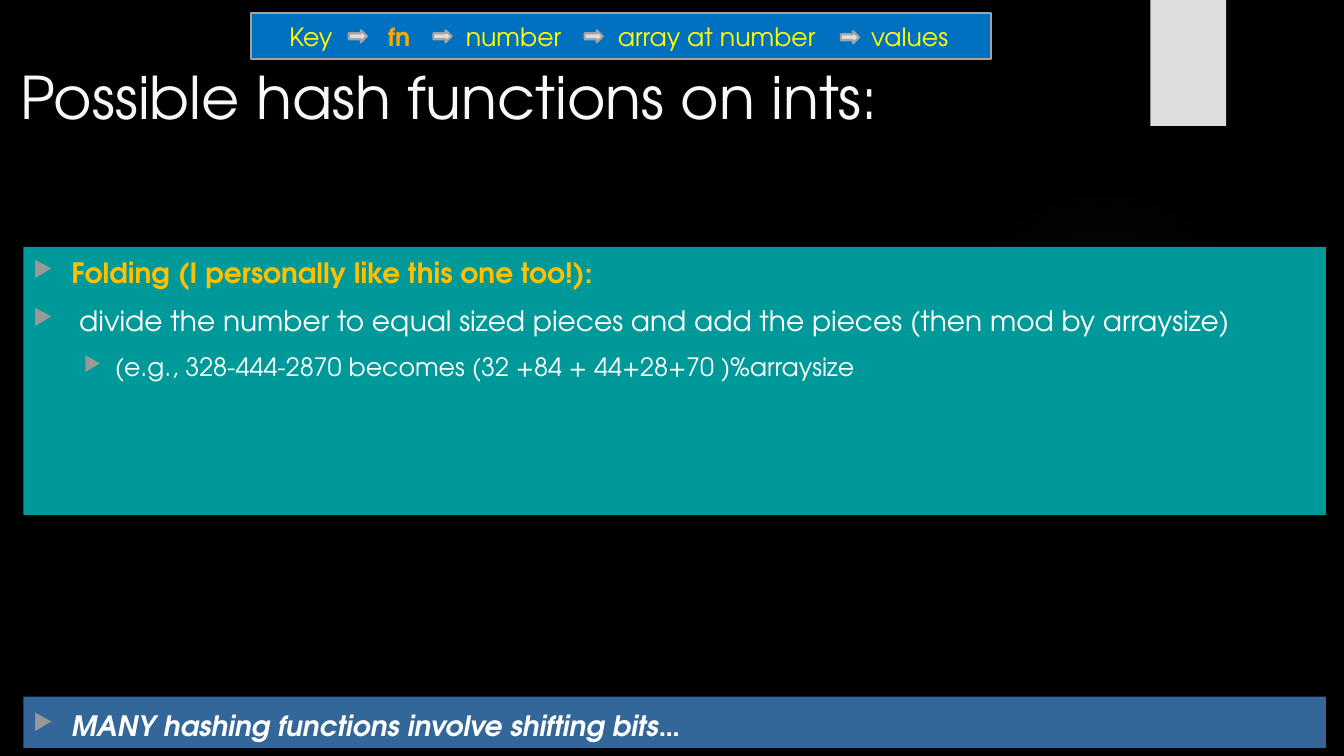
import pptx
import pptx.dml.color
import pptx.enum.shapes
import pptx.enum.text
import pptx.oxml
import pptx.oxml.ns
import pptx.util

RGBColor = pptx.dml.color.RGBColor
MSO_SHAPE = pptx.enum.shapes.MSO_SHAPE
MSO_ANCHOR = pptx.enum.text.MSO_ANCHOR

BLACK = RGBColor(0x00, 0x00, 0x00)
WHITE = RGBColor(0xFF, 0xFF, 0xFF)
OFF_WHITE = RGBColor(0xF8, 0xF8, 0xF8)
LIGHT_GRAY = RGBColor(0xDD, 0xDD, 0xDD)
OUTLINE_GRAY = RGBColor(0xA3, 0xA3, 0xA3)
BULLET_GRAY = RGBColor(0x99, 0x99, 0x99)
GLOW_GRAY = RGBColor(0x66, 0x66, 0x66)
BANNER_BLUE = RGBColor(0x00, 0x70, 0xC0)
STEEL_BLUE = RGBColor(0x33, 0x66, 0x99)
TEAL = RGBColor(0x00, 0x99, 0x99)
YELLOW = RGBColor(0xFF, 0xFF, 0x00)
ORANGE = RGBColor(0xFC, 0xA9, 0x04)
GOLD = RGBColor(0xFF, 0xC0, 0x00)

NAMESPACE = pptx.oxml.ns.nsdecls("a")


class HashingSlide:
    font_name = "TeX Gyre Adventor"
    outline_points = 1.5

    def __init__(self, presentation):
        self.width = presentation.slide_width
        self.height = presentation.slide_height
        self.slide = presentation.slides.add_slide(presentation.slide_layouts[6])
        background = self.slide.background.fill
        background.solid()
        background.fore_color.rgb = BLACK

    def across(self, percent):
        return round(self.width * percent / 100)

    def box(self, left, top, width, height):
        return (self.across(left), round(self.height * top / 100),
                self.across(width), round(self.height * height / 100))

    def shape(self, kind, place, fill, outline=None):
        shape = self.slide.shapes.add_shape(kind, *self.box(*place))
        shape.shadow.inherit = False
        shape.fill.solid()
        shape.fill.fore_color.rgb = fill
        if outline is None:
            shape.line.fill.background()
        else:
            shape.line.color.rgb = outline
            shape.line.width = pptx.util.Pt(self.outline_points)
        return shape

    def glow(self, place, stops):
        shape = self.shape(MSO_SHAPE.OVAL, place, GLOW_GRAY)
        stop_xml = "".join(
            f'<a:gs pos="{position * 1000}"><a:srgbClr val="{GLOW_GRAY}">'
            f'<a:alpha val="{alpha * 1000}"/></a:srgbClr></a:gs>'
            for position, alpha in stops)
        gradient = pptx.oxml.parse_xml(
            f'<a:gradFill {NAMESPACE}><a:gsLst>{stop_xml}</a:gsLst><a:path path="circle">'
            '<a:fillToRect l="50000" t="50000" r="50000" b="50000"/></a:path></a:gradFill>')
        properties = shape.element.spPr
        solid = properties.find(pptx.oxml.ns.qn("a:solidFill"))
        properties.replace(solid, gradient)

    def run(self, paragraph, text, size, color, **styles):
        run = paragraph.add_run()
        run.text = text
        run.font.color.rgb = color
        styles = {"name": self.font_name, "size": pptx.util.Pt(size), **styles}
        for name, value in styles.items():
            setattr(run.font, name, value)

    def title(self, place, text):
        frame = self.slide.shapes.add_textbox(*self.box(*place)).text_frame
        frame.word_wrap = True
        self.run(frame.paragraphs[0], text, 42, OFF_WHITE)

    def banner(self, place, words, tab_stops, margin):
        shape = self.shape(MSO_SHAPE.RECTANGLE, place, BANNER_BLUE, OUTLINE_GRAY)
        frame = shape.text_frame
        frame.vertical_anchor = MSO_ANCHOR.MIDDLE
        frame.margin_left = self.across(margin)
        paragraph = frame.paragraphs[0]
        paragraph.alignment = pptx.enum.text.PP_ALIGN.LEFT
        tabs = "".join(f'<a:tab pos="{self.across(stop)}" algn="l"/>' for stop in tab_stops)
        paragraph._p.get_or_add_pPr().append(
            pptx.oxml.parse_xml(f"<a:tabLst {NAMESPACE}>{tabs}</a:tabLst>"))
        for index, (word, color, bold) in enumerate(words):
            self.run(paragraph, "\t" * (index > 0) + word, 18, color, bold=bold)

    def arrow(self, left, top):
        self.shape(MSO_SHAPE.RIGHT_ARROW, (left, top, 1.35, 1.6), LIGHT_GRAY, OUTLINE_GRAY)

    def bullet(self, paragraph, level):
        margin, hanging = ((0.38, 0.38), (0.81, 0.31))[level]
        paragraph.level = level
        properties = paragraph._p.get_or_add_pPr()
        properties.set("marL", str(pptx.util.Inches(margin)))
        properties.set("indent", str(-pptx.util.Inches(hanging)))
        for element in (f'<a:buClr {NAMESPACE}><a:srgbClr val="{BULLET_GRAY}"/></a:buClr>',
                        f'<a:buSzPct {NAMESPACE} val="80000"/>',
                        f'<a:buChar {NAMESPACE} char="▶"/>'):
            properties.append(pptx.oxml.parse_xml(element))

    def panel(self, place, fill, items, line_spacing, gap=0):
        frame = self.shape(MSO_SHAPE.RECTANGLE, place, fill).text_frame
        frame.word_wrap = True
        frame.vertical_anchor = MSO_ANCHOR.TOP
        for index, (level, text, size, color, styles) in enumerate(items):
            paragraph = frame.add_paragraph() if index else frame.paragraphs[0]
            self.bullet(paragraph, level)
            formats = {"alignment": pptx.enum.text.PP_ALIGN.LEFT,
                       "line_spacing": line_spacing,
                       "space_before": pptx.util.Pt(gap if index else 0)}
            for name, value in formats.items():
                setattr(paragraph, name, value)
            self.run(paragraph, text, size, color, **styles)


def main():
    presentation = pptx.Presentation()
    presentation.slide_width = pptx.util.Inches(13.33)
    presentation.slide_height = pptx.util.Inches(7.5)
    page = HashingSlide(presentation)

    page.glow((70.58, 24.4, 23.1, 41.07), [(0, 7), (36, 6), (69, 0)])
    page.shape(MSO_SHAPE.RECTANGLE, (85.6, 0, 5.63, 16.67), LIGHT_GRAY)
    page.title((0.75, 7.33, 77.2, 20.4), "Possible hash functions on ints:")

    page.banner((18.68, 1.73, 55.06, 6.13),
                [("Key", YELLOW, False), ("fn", ORANGE, True), ("number", YELLOW, False),
                 ("array at number", YELLOW, False), ("values", YELLOW, False)],
                tab_stops=(7.35, 13.13, 24.45, 43.28), margin=2.85)
    for left, top in ((25.95, 4), (32.25, 4), (43.5, 4), (62.57, 4.13)):
        page.arrow(left, top)

    page.panel((1.73, 32.67, 96.92, 35.47), TEAL, [
        (0, "Folding (I personally like this one too!):", 20, GOLD, {"bold": True}),
        (0, " divide the number to equal sized pieces and add the pieces "
            "(then mod by arraysize)", 20, WHITE, {}),
        (1, "(e.g., 328-444-2870 becomes (32 +84 + 44+28+70 )%arraysize", 18, WHITE, {}),
    ], line_spacing=1.1, gap=8)
    page.panel((1.73, 92.13, 96.92, 6.8), STEEL_BLUE, [
        (0, "MANY hashing functions involve shifting bits…", 20, WHITE,
         {"bold": True, "italic": True}),
    ], line_spacing=1.2)

    presentation.save("out.pptx")


if __name__ == "__main__":
    main()
